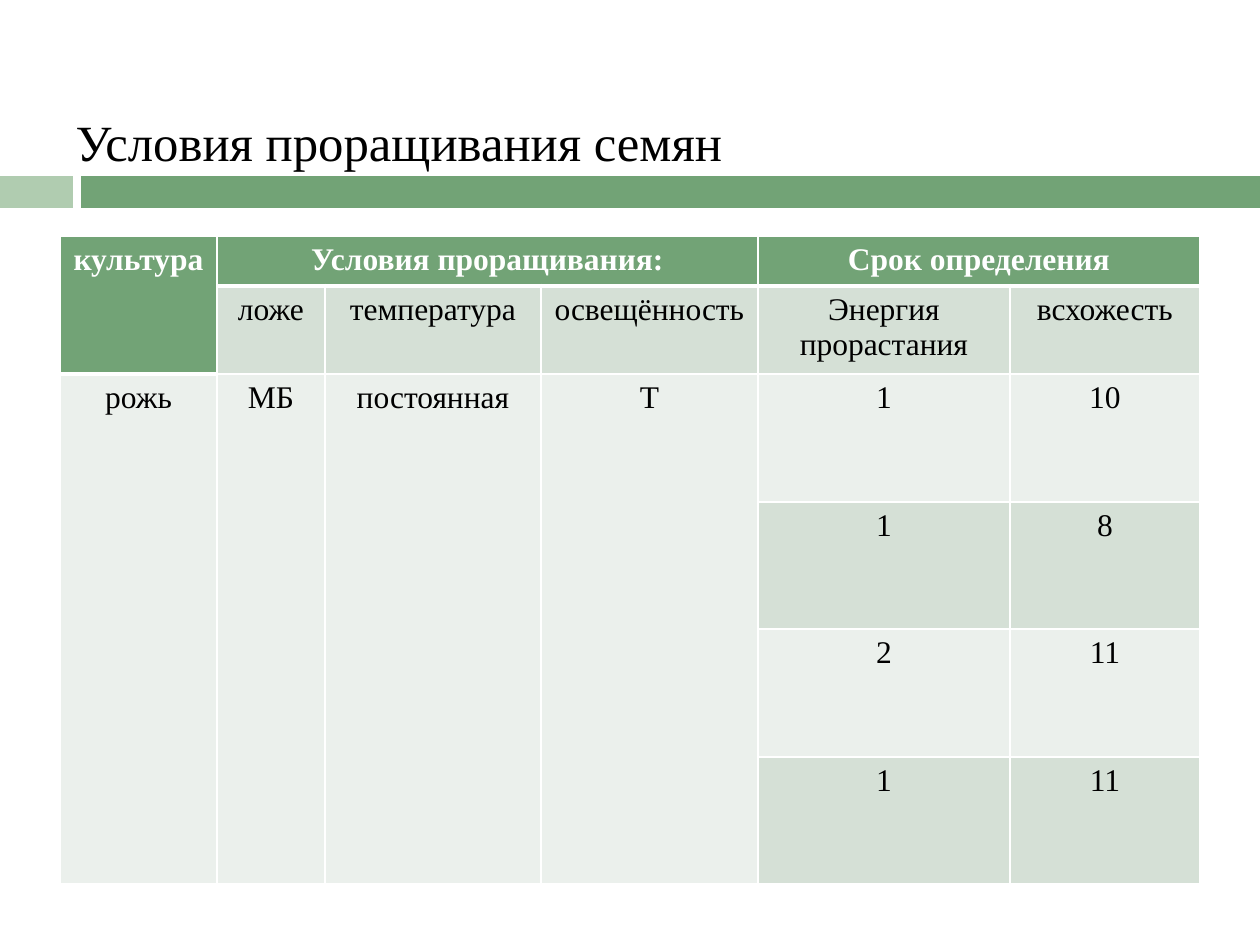
from lxml import etree
from pptx import Presentation
from pptx.dml.color import RGBColor
from pptx.enum.shapes import MSO_SHAPE
from pptx.enum.text import MSO_ANCHOR, MSO_AUTO_SIZE, PP_ALIGN
from pptx.oxml.ns import qn
from pptx.util import Emu, Pt

RECTANGLE = MSO_SHAPE.RECTANGLE
TOP = MSO_ANCHOR.TOP
NO_AUTOFIT = MSO_AUTO_SIZE.NONE
LEFT, CENTER = PP_ALIGN.LEFT, PP_ALIGN.CENTER

PX_PER_INCH = 126
FONT = "Times New Roman"
GREEN, PALE_GREEN = "72A376", "B0CCB0"
BAND_DARK, BAND_LIGHT = "D5E0D6", "EBF0EC"
WHITE, BLACK = "FFFFFF", "000000"

COLUMN_WIDTHS = [157, 108, 216, 217, 252, 190]
ROW_HEIGHTS = [50, 88, 128, 127, 128, 127]
GERMINATION = [
    ["культура", "Условия проращивания:", "", "", "Срок определения", ""],
    ["", "ложе", "температура", "освещённость", "Энергия прорастания", "всхожесть"],
    ["рожь", "МБ", "постоянная", "Т", "1", "10"],
    ["", "", "", "", "1", "8"],
    ["", "", "", "", "2", "11"],
    ["", "", "", "", "1", "11"],
]
# First and last cell of each merged block, as (row, column)
MERGES = [((0, 0), (1, 0)), ((0, 1), (0, 3)), ((0, 4), (0, 5))]
MERGES += [((2, column), (5, column)) for column in range(4)]


def px(length):
    return Emu(round(length * 914400 / PX_PER_INCH))


def color(hex_value):
    return RGBColor.from_string(hex_value)


def format_text(paragraph, size, hex_value, align, bold=False):
    paragraph.alignment = align
    for run in paragraph.runs:
        run.font.name = FONT
        run.font.size = Pt(size)
        run.font.bold = bold
        run.font.color.rgb = color(hex_value)


def add_bar(slide, left, width, hex_value):
    bar = slide.shapes.add_shape(RECTANGLE, px(left), px(176), px(width), px(32))
    bar.shadow.inherit = False
    bar.fill.solid()
    bar.fill.fore_color.rgb = color(hex_value)
    bar.line.fill.background()


def add_heading(slide, text):
    heading = slide.placeholders[1]
    heading.left, heading.top = px(63), px(104)
    heading.width, heading.height = px(1134), px(740)
    frame = heading.text_frame
    frame.text = text
    frame.word_wrap = True
    frame.auto_size = NO_AUTOFIT
    frame.vertical_anchor = TOP
    paragraph = frame.paragraphs[0]
    properties = paragraph._p.get_or_add_pPr()
    properties.set("marL", str(px(44)))
    properties.set("indent", str(px(-44)))
    etree.SubElement(properties, qn("a:buNone"))
    paragraph.space_before = Pt(0)
    format_text(paragraph, 29, BLACK, LEFT)


def set_borders(cell, top, bottom):
    properties = cell._tc.get_or_add_tcPr()
    for side, width in (("L", 1), ("R", 1), ("T", top), ("B", bottom)):
        line = etree.SubElement(properties, qn(f"a:ln{side}"), w=str(Pt(width)))
        fill = etree.SubElement(line, qn("a:solidFill"))
        etree.SubElement(fill, qn("a:srgbClr"), val=WHITE)


def is_header(row, column):
    return row == 0 or (row, column) == (1, 0)


def format_cell(cell, row, column, text):
    header = is_header(row, column)
    below_header = row > 0 and not header and is_header(row - 1, column)
    set_borders(cell, 3 if below_header else 1, 3 if header else 1)
    band = BAND_DARK if row % 2 else BAND_LIGHT
    cell.fill.solid()
    cell.fill.fore_color.rgb = color(GREEN if header else band)
    if text:
        cell.text_frame.text = text
        format_text(cell.text_frame.paragraphs[0], 18,
                    WHITE if header else BLACK, CENTER, header)


def add_germination_table(slide):
    frame = slide.shapes.add_table(
        len(ROW_HEIGHTS), len(COLUMN_WIDTHS), px(60), px(236),
        px(sum(COLUMN_WIDTHS)), px(sum(ROW_HEIGHTS)))
    table = frame.table
    for column, width in zip(table.columns, COLUMN_WIDTHS):
        column.width = px(width)
    for row, height in zip(table.rows, ROW_HEIGHTS):
        row.height = px(height)
    for row, texts in enumerate(GERMINATION):
        for column, text in enumerate(texts):
            format_cell(table.cell(row, column), row, column, text)
    for first, last in MERGES:
        table.cell(*first).merge(table.cell(*last))


def main():
    presentation = Presentation()
    presentation.slide_width, presentation.slide_height = px(1260), px(945)
    slide = presentation.slides.add_slide(presentation.slide_layouts[1])

    # The heading sits in the body placeholder, so the title one is not needed
    unused_title = slide.shapes.title._element
    unused_title.getparent().remove(unused_title)

    # Divider bars
    add_bar(slide, 0, 73, PALE_GREEN)
    add_bar(slide, 81, 1179, GREEN)

    # Content
    add_heading(slide, "Условия проращивания семян")
    add_germination_table(slide)
    presentation.save("out.pptx")


if __name__ == "__main__":
    main()
